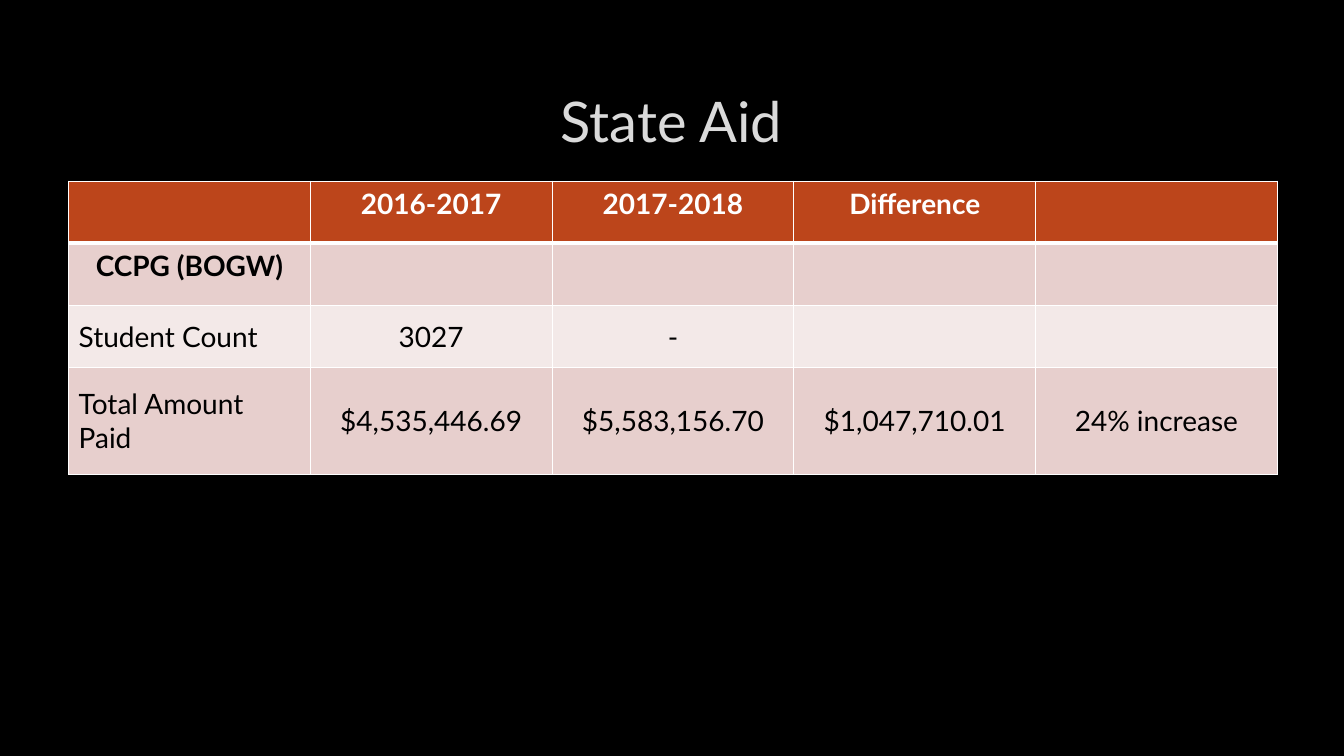
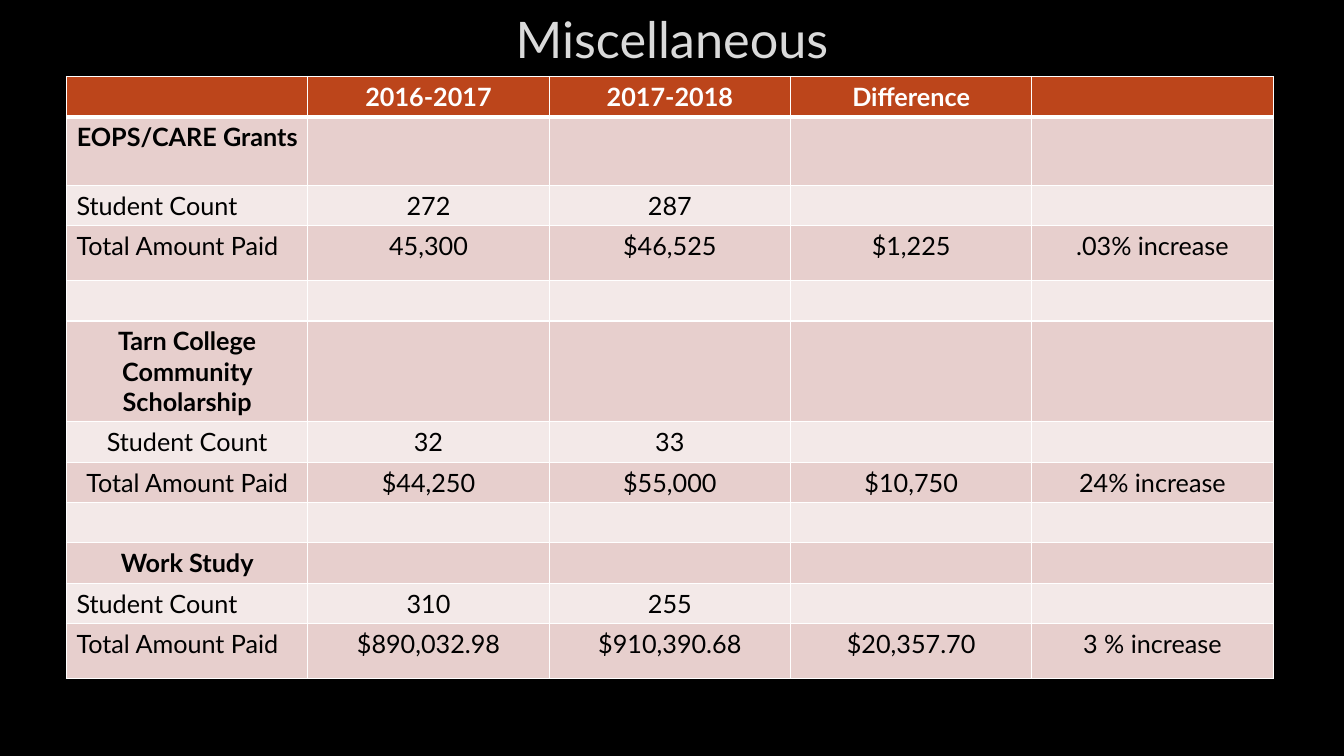
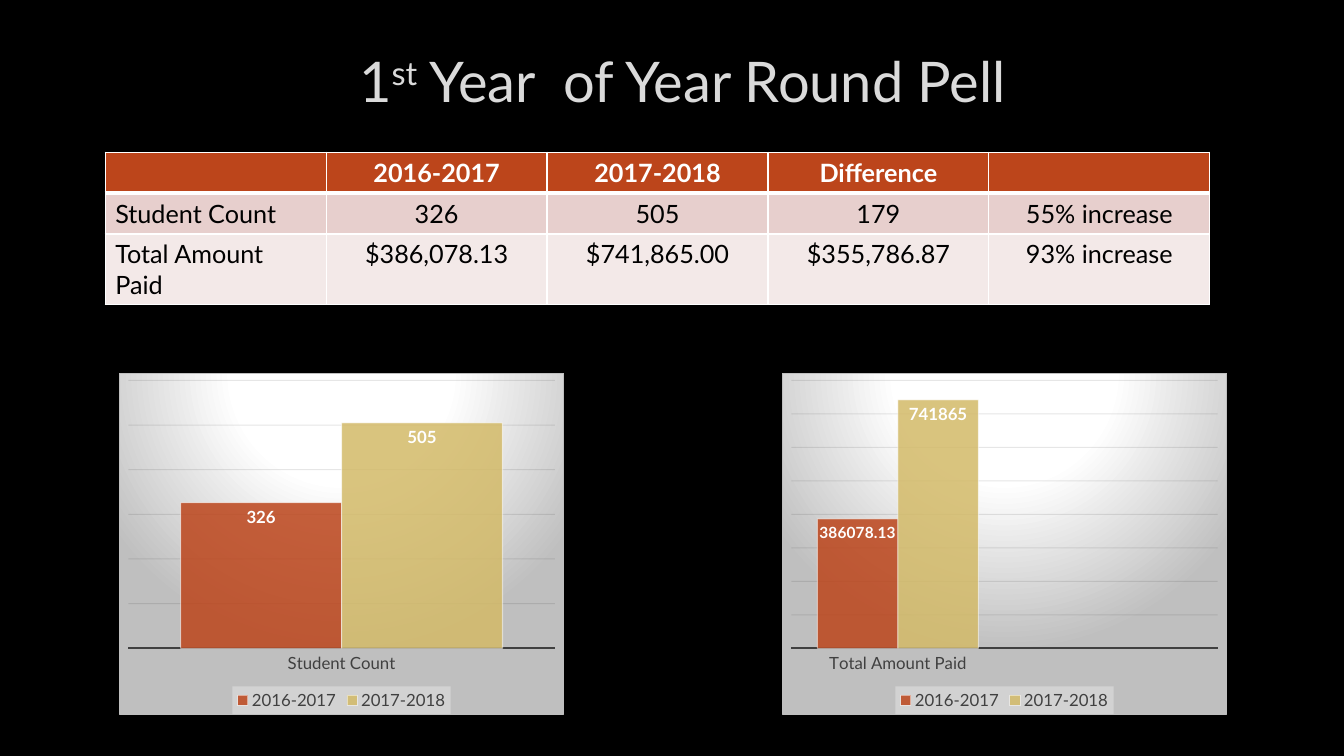
from lxml import etree
from pptx import Presentation
from pptx.chart.data import CategoryChartData
from pptx.dml.color import RGBColor
from pptx.enum.chart import XL_CHART_TYPE, XL_LABEL_POSITION, XL_LEGEND_POSITION, XL_TICK_MARK
from pptx.enum.text import MSO_ANCHOR, PP_ALIGN
from pptx.oxml import parse_xml
from pptx.oxml.ns import nsdecls, qn
from pptx.util import Pt

LEFT, CENTER = PP_ALIGN.LEFT, PP_ALIGN.CENTER
TOP, MIDDLE = MSO_ANCHOR.TOP, MSO_ANCHOR.MIDDLE
COLUMNS = XL_CHART_TYPE.COLUMN_CLUSTERED
INSIDE_END = XL_LABEL_POSITION.INSIDE_END
BOTTOM = XL_LEGEND_POSITION.BOTTOM
NO_TICKS = XL_TICK_MARK.NONE

FONT = "Lato"
BLACK = RGBColor(0x00, 0x00, 0x00)
WHITE = RGBColor(0xFF, 0xFF, 0xFF)
TITLE_GRAY = RGBColor(0xDA, 0xDA, 0xDA)
DARK_GRAY = RGBColor(0x40, 0x40, 0x40)
GRID = RGBColor(0x0D, 0x0D, 0x0D)
RUST = RGBColor(0xBC, 0x45, 0x1B)
GOLD = RGBColor(0xD3, 0xBA, 0x68)
BANDS = (RGBColor(0xE7, 0xCF, 0xCD), RGBColor(0xF3, 0xE9, 0xE8))

YEARS = ("2016-2017", "2017-2018")
HEADER = ("", *YEARS, "Difference", "")
COUNT, PAID = "Student Count", "Total Amount Paid"

# Row kinds: bold group heading, label at left, label centred
GROUP, ROW, CENTERED = "group", "row", "centered"

TITLE_OUTLINE = (f'<a:ln {nsdecls("a")} w="9525"><a:solidFill><a:srgbClr val="404040">'
                 '<a:alpha val="10000"/></a:srgbClr></a:solidFill></a:ln>')
CHART_BACK = (f'<c:spPr {nsdecls("c", "a")}><a:gradFill><a:gsLst>'
              '<a:gs pos="0"><a:srgbClr val="FFFFFF"/></a:gs>'
              '<a:gs pos="39000"><a:srgbClr val="FFFFFF"/></a:gs>'
              '<a:gs pos="100000"><a:srgbClr val="BFBFBF"/></a:gs></a:gsLst>'
              '<a:path path="circle"><a:fillToRect l="50000" t="-80000" r="50000" b="180000"/>'
              '</a:path></a:gradFill><a:ln w="9525"><a:solidFill><a:srgbClr val="BFBFBF"/>'
              '</a:solidFill></a:ln></c:spPr>')
LEGEND_BACK = (f'<c:spPr {nsdecls("c", "a")}><a:solidFill><a:srgbClr val="F2F2F2">'
               '<a:alpha val="39000"/></a:srgbClr></a:solidFill></c:spPr>')


def style(font, size, color, bold=False):
    font.name, font.size, font.bold = FONT, Pt(size), bold
    font.color.rgb = color


def add_text(p, text, size=18, color=BLACK, bold=False, align=LEFT, baseline=0):
    p.alignment = align
    if not text:  # an empty cell keeps its line height
        etree.SubElement(p._p, qn("a:endParaRPr"), sz=str(size * 100))
        return None
    r = p.add_run()
    r.text = text
    style(r.font, size, color, bold)
    if baseline:
        r.font._element.set("baseline", str(baseline * 1000))
    return r


def make_translucent(el, xpath, percent):
    for color in el.xpath(xpath + "/a:solidFill/a:srgbClr"):
        etree.SubElement(color, qn("a:alpha"), val=str(percent * 1000))


def add_slide(prs):
    s = prs.slides.add_slide(prs.slide_layouts[6])
    s.background.fill.solid()
    s.background.fill.fore_color.rgb = BLACK
    return s


def add_title(s, box, parts, size=40):
    """parts holds (text, baseline) pairs."""
    tf = s.shapes.add_textbox(*map(Pt, box)).text_frame
    tf.word_wrap, tf.vertical_anchor = True, MIDDLE
    for text, baseline in parts:
        r = add_text(tf.paragraphs[0], text, size=size, color=TITLE_GRAY,
                     align=CENTER, baseline=baseline)
        r.font._element.insert(0, parse_xml(TITLE_OUTLINE))


def format_cell(cell, fill, top, bottom):
    tcPr = cell._tc.get_or_add_tcPr()
    for side, width in (("L", 1), ("R", 1), ("T", top), ("B", bottom)):
        ln = etree.SubElement(tcPr, qn(f"a:ln{side}"), w=str(Pt(width)))
        solid = etree.SubElement(ln, qn("a:solidFill"))
        etree.SubElement(solid, qn("a:srgbClr"), val=str(WHITE))
    cell.fill.solid()
    cell.fill.fore_color.rgb = fill


def add_aid_table(s, left, top, width, header_height, rows, size=18, anchor=TOP):
    """rows holds (height, kind, texts); the header row is added on top."""
    rows = [(header_height, GROUP, HEADER), *rows]
    n = len(HEADER)
    table = s.shapes.add_table(len(rows), n, Pt(left), Pt(top), Pt(width),
                               Pt(sum(row[0] for row in rows))).table
    for col in table.columns:
        col.width = Pt(width / n)
    for i, (height, kind, texts) in enumerate(rows):
        table.rows[i].height = Pt(height)
        for j in range(n):
            cell = table.cell(i, j)
            format_cell(cell, BANDS[(i - 1) % 2] if i else RUST,
                        top=3 if i == 1 else 1, bottom=1 if i else 3)
            cell.vertical_anchor = TOP if kind == GROUP else anchor
            add_text(cell.text_frame.paragraphs[0], texts[j] if j < len(texts) else "",
                     size=size, color=BLACK if i else WHITE, bold=kind == GROUP,
                     align=LEFT if kind == ROW and j == 0 else CENTER)


def add_year_chart(s, left, categories, values, top_value, label_sizes):
    """values holds one list for each year."""
    data = CategoryChartData()
    data.categories = categories
    for year, vals in zip(YEARS, values):
        data.add_series(year, vals)
    chart = s.shapes.add_chart(COLUMNS, Pt(left), Pt(266.5), Pt(318), Pt(244), data).chart
    style(chart.font, 10, WHITE)
    chart.has_title = False
    chart._chartSpace.find(qn("c:chart")).addnext(parse_xml(CHART_BACK))

    # Legend
    chart.has_legend = True
    legend = chart.legend
    legend.position, legend.include_in_layout = BOTTOM, False
    style(legend.font, 12, DARK_GRAY)
    legend._element.find(qn("c:overlay")).addnext(parse_xml(LEGEND_BACK))

    # Axes
    axis = chart.category_axis
    axis.major_tick_mark = NO_TICKS
    axis.format.line.color.rgb, axis.format.line.width = DARK_GRAY, Pt(1.5)
    style(axis.tick_labels.font, 12, DARK_GRAY)
    axis = chart.value_axis
    axis.visible = False
    axis.minimum_scale, axis.maximum_scale = 0, top_value
    axis.major_unit = 10 ** (len(str(top_value)) - 1)
    line = axis.major_gridlines.format.line
    line.color.rgb, line.width = GRID, Pt(0.75)
    make_translucent(axis._element, "c:majorGridlines/c:spPr/a:ln", 10)

    # Columns
    plot = chart.plots[0]
    plot.gap_width, plot.overlap, plot.vary_by_categories = 65, 0, False
    for ser, color, size in zip(plot.series, (RUST, GOLD), label_sizes):
        ser.invert_if_negative = False
        ser.format.fill.solid()
        ser.format.fill.fore_color.rgb = color
        ser.format.line.color.rgb, ser.format.line.width = WHITE, Pt(0.75)
        make_translucent(ser._element, "c:spPr", 85)
        make_translucent(ser._element, "c:spPr/a:ln", 50)
        labels = ser.data_labels
        labels.show_value, labels.position = True, INSIDE_END
        style(labels.font, size, WHITE, bold=True)


def state_aid(prs):
    s = add_slide(prs)
    add_title(s, (72, 48, 815, 76), [("State Aid", 0)])
    add_aid_table(s, 49, 129.5, 863.5, 44.3, [
        (44.3, GROUP, ["CCPG (BOGW)"]),
        (44.3, ROW, [COUNT, "3027", "-"]),
        (76.4, ROW, [PAID, "$4,535,446.69", "$5,583,156.70", "$1,047,710.01", "24% increase"]),
    ], size=20, anchor=MIDDLE)


def miscellaneous(prs):
    s = add_slide(prs)
    add_title(s, (81, 0, 798, 55), [("Miscellaneous", 0)], size=36)
    low, tall = 28.4, 39.4
    add_aid_table(s, 47.5, 54.7, 862, low, [
        (48.7, GROUP, ["EOPS/CARE Grants"]),
        (low, ROW, [COUNT, "272", "287"]),
        (tall, ROW, [PAID, "45,300", "$46,525", "$1,225", ".03% increase"]),
        (low, ROW, []),
        (low, GROUP, ["Tarn College Community Scholarship"]),
        (low, CENTERED, [COUNT, "32", "33"]),
        (low, CENTERED, [PAID, "$44,250", "$55,000", "$10,750", "24% increase"]),
        (low, ROW, []),
        (low, GROUP, ["Work Study"]),
        (low, ROW, [COUNT, "310", "255"]),
        (tall, ROW, [PAID, "$890,032.98", "$910,390.68", "$20,357.70", "3 % increase"]),
    ])


def year_round_pell(prs):
    s = add_slide(prs)
    add_title(s, (88.5, 0, 798, 114.5),
              [("1", 0), ("st", 30), (" Year  of Year Round Pell", 0)])
    add_aid_table(s, 75.2, 108.8, 789, 29.2, [
        (29.2, ROW, [COUNT, "326", "505", "179", "55% increase"]),
        (29.2, ROW, [PAID, "$386,078.13", "$741,865.00", "$355,786.87", "93% increase"]),
    ])
    add_year_chart(s, 85, [COUNT], [[326], [505]], 600, (12, 12))
    add_year_chart(s, 558.5, [PAID, ""], [[386078.13, None], [741865, None]], 800000, (11, 12))


def main():
    prs = Presentation()
    prs.slide_width, prs.slide_height = Pt(960), Pt(540)
    state_aid(prs)
    miscellaneous(prs)
    year_round_pell(prs)
    prs.save("out.pptx")


if __name__ == "__main__":
    main()
